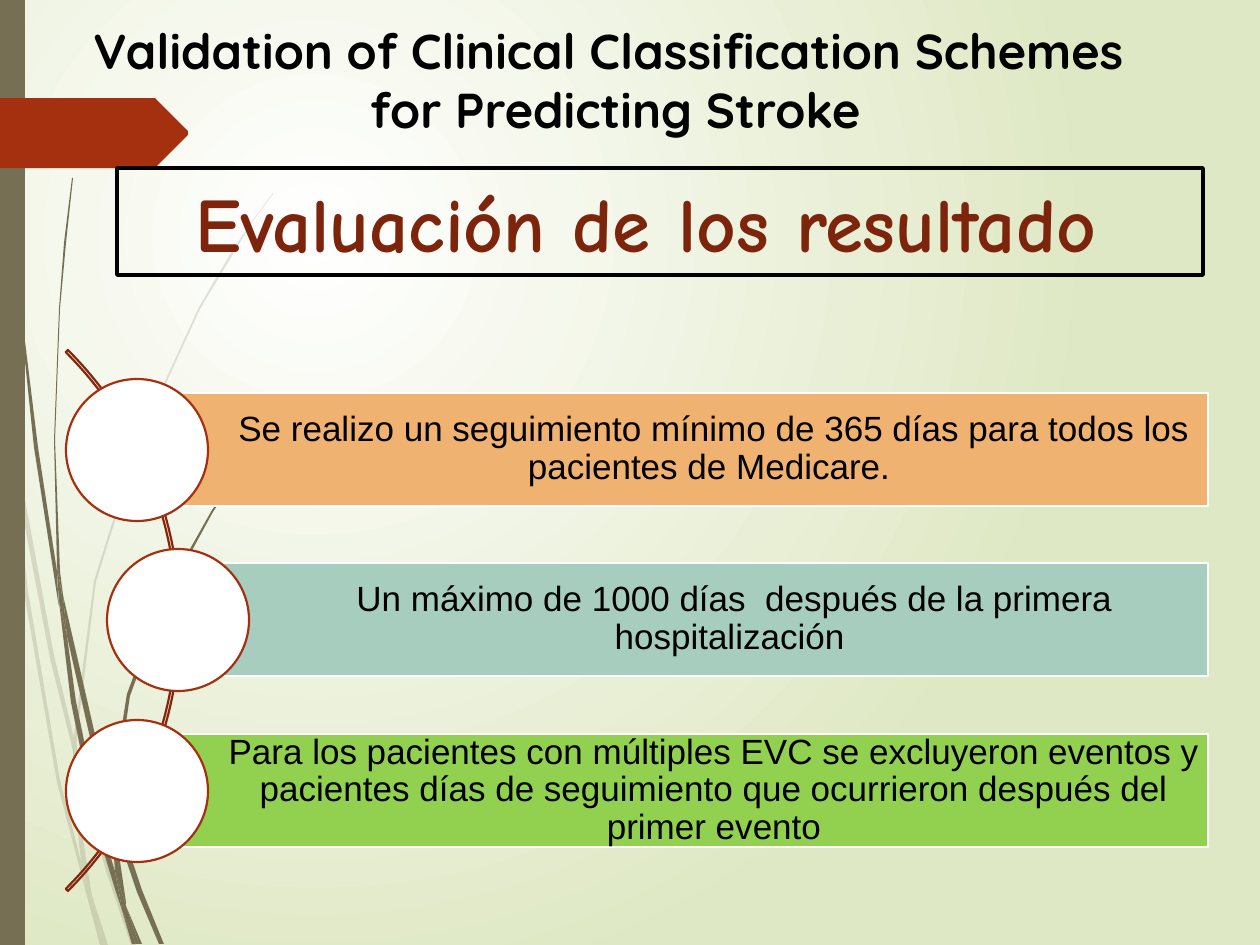
from lxml import etree
from pptx import Presentation
from pptx.dml.color import RGBColor
from pptx.enum.shapes import MSO_SHAPE
from pptx.enum.text import MSO_ANCHOR, MSO_AUTO_SIZE, PP_ALIGN
from pptx.oxml.ns import qn
from pptx.util import Inches, Pt

RECT, OVAL, ARC = MSO_SHAPE.RECTANGLE, MSO_SHAPE.OVAL, MSO_SHAPE.BLOCK_ARC
LEFT, MID = PP_ALIGN.LEFT, PP_ALIGN.CENTER
MIDDLE = MSO_ANCHOR.MIDDLE
FIXED, GROW = MSO_AUTO_SIZE.NONE, MSO_AUTO_SIZE.SHAPE_TO_FIT_TEXT
SCALE = Inches(1) / 126

TAUPE, RUST, WHITE, BLACK = "766F54", "A53010", "FFFFFF", "000000"

# Outlines of the grass blades, in px
PALE = [
    [(10, 441), (8, 406), (0, 355), (0, 377), (9, 433)],
    [(50, 658), (74, 755), (74, 738), (54, 655), (13, 435), (15, 474)],
    [(81, 765), (77, 751), (77, 769), (107, 874), (131, 945), (136, 945),
     (111, 872)],
    [(105, 945), (108, 945), (92, 896)],
    [(81, 861), (60, 780), (28, 591), (15, 474), (10, 441), (24, 592),
     (57, 782), (81, 873), (88, 900), (87, 891)],
    [(73, 755), (76, 814), (81, 861), (84, 872), (92, 896), (91, 890),
     (79, 814), (77, 769), (77, 766)],
    [(77, 736), (96, 582), (140, 440), (200, 309), (236, 249), (253, 221),
     (273, 194), (273, 193), (253, 220), (234, 248), (199, 307), (139, 438),
     (94, 581), (74, 736), (74, 738), (77, 751)],
    [(88, 900), (100, 945), (103, 945)],
    [(77, 766), (77, 769), (77, 751), (74, 738), (73, 755)],
    [(84, 872), (82, 861), (87, 891), (88, 900), (103, 945), (105, 945),
     (92, 896)],
]
DARK = [
    [(6, 139), (18, 294), (34, 447), (58, 601), (59, 606), (57, 576),
     (57, 571), (38, 447), (19, 292), (8, 137), (5, 60), (4, 0), (3, 0),
     (4, 60)],
    [(92, 746), (111, 813), (111, 795), (97, 743), (63, 595), (67, 636)],
    [(118, 818), (115, 808), (115, 827), (137, 892), (159, 944), (164, 944),
     (142, 890)],
    [(115, 871), (102, 828), (76, 701), (67, 636), (59, 601), (71, 702),
     (97, 830), (116, 892), (122, 910), (121, 903)],
    [(63, 595), (60, 571), (55, 440), (60, 309), (66, 243), (73, 178),
     (72, 178), (64, 243), (59, 309), (54, 440), (57, 566), (62, 595)],
    [(139, 944), (142, 944), (126, 906)],
    [(59, 601), (67, 636), (63, 595), (62, 595), (57, 566), (57, 571)],
    [(115, 798), (130, 696), (165, 600), (213, 512), (241, 471), (256, 452),
     (272, 433), (271, 433), (256, 451), (241, 470), (212, 510), (163, 597),
     (127, 694), (111, 795), (115, 808)],
    [(122, 910), (132, 944), (136, 944)],
    [(111, 813), (115, 871), (121, 890), (126, 906), (126, 902), (115, 827),
     (113, 820)],
    [(111, 813), (113, 820), (115, 827), (115, 808), (111, 795)],
    [(121, 890), (115, 871), (121, 903), (122, 910), (136, 944), (139, 944),
     (126, 906)],
]
TAB = [(0, 98), (155, 98), (188, 131), (188, 135), (155, 168), (0, 168)]

STEPS = [
    (137, "F0B270", "Se realizo un seguimiento mínimo de 365 días para todos "
     "los pacientes de Medicare. "),
    (178, "A6CDBD", "Un máximo de 1000 días  después de la primera "
     "hospitalización "),
    (137, "92D050", "Para los pacientes con múltiples EVC se excluyeron "
     "eventos y pacientes días de seguimiento que ocurrieron después del "
     "primer evento"),
]


def px(num):
    return round(num * SCALE)


def tint(code):
    return RGBColor.from_string(code)


def write(para, text, font="Arial", size=20, bold=False, color=BLACK,
          align=MID, space=None):
    run = para.add_run()
    run.text = text
    run.font.name, run.font.size, run.font.bold = font, Pt(size), bold
    run.font.color.rgb = tint(color)
    para.alignment = align
    if space:
        para.line_spacing = space


class Deck:
    def __init__(self):
        self.pres = Presentation()
        self.pres.slide_width, self.pres.slide_height = px(1260), px(945)
        self.slide = self.pres.slides.add_slide(self.pres.slide_layouts[5])
        self.shapes = self.slide.shapes

    def glow(self, inner, outer):
        """Fill the background with a round gradient."""
        fill = self.slide.background.fill
        fill.gradient()
        for stop, code in zip(fill.gradient_stops, (inner, outer)):
            stop.color.rgb = tint(code)
        grad = self.slide.element.find(".//" + qn("a:gradFill"))
        grad.remove(grad.find(qn("a:lin")))
        ring = etree.SubElement(grad, qn("a:path"), path="circle")
        etree.SubElement(ring, qn("a:fillToRect"), l="50000", t="50000",
                         r="100000", b="100000")

    def paint(self, shape, fill=None, line=None, width=1.25):
        if fill:
            shape.fill.solid()
            shape.fill.fore_color.rgb = tint(fill)
        else:
            shape.fill.background()
        if line:
            shape.line.color.rgb = tint(line)
            shape.line.width = Pt(width)
        else:
            shape.line.fill.background()

    def shape(self, kind, x, y, w, h, **look):
        item = self.shapes.add_shape(kind, px(x), px(y), px(w), px(h))
        item.shadow.inherit = False
        self.paint(item, **look)
        return item

    def blade(self, points, fill, alpha=None):
        """Draw a closed outline; alpha is its opacity in percent."""
        pen = self.shapes.build_freeform(*points[0], scale=SCALE)
        pen.add_line_segments(points[1:], close=True)
        item = pen.convert_to_shape()
        item.shadow.inherit = False
        self.paint(item, fill)
        if alpha:
            code = item.element.spPr.find(".//" + qn("a:srgbClr"))
            etree.SubElement(code, qn("a:alpha"), val=str(alpha * 1000))

    def bar(self, x, y, w, h, fill, text):
        frame = self.shape(RECT, x, y, w, h, fill=fill, line=WHITE).text_frame
        frame.word_wrap = True
        frame.vertical_anchor = MIDDLE
        frame.margin_left = px(91)
        frame.margin_top = frame.margin_right = frame.margin_bottom = px(8)
        write(frame.paragraphs[0], text, space=0.9)

    def head(self, x, y, w, h, first, second):
        frame = self.shapes.add_textbox(px(x), px(y), px(w), px(h)).text_frame
        frame.word_wrap = False
        frame.auto_size = GROW
        look = dict(font="Quicksand", size=28, bold=True)
        write(frame.paragraphs[0], first, align=LEFT, **look)
        write(frame.add_paragraph(), second, **look)

    def title(self, x, y, w, h, text):
        item = self.shapes.title
        item.left, item.top, item.width, item.height = map(px, (x, y, w, h))
        self.paint(item, line=BLACK, width=2.25)
        frame = item.text_frame
        frame.word_wrap = True
        frame.auto_size = FIXED
        frame.vertical_anchor = MIDDLE
        write(frame.paragraphs[0], text, font="Comic Neue", size=44,
              bold=True, color="7C240C")
        # Bring the title in front of the grass
        item.element.getparent().append(item.element)


def main():
    deck = Deck()
    deck.glow(WHITE, "DFE8C4")
    for points in PALE:
        deck.blade(points, TAUPE, alpha=20)
    for points in DARK:
        deck.blade(points, TAUPE)
    deck.shape(RECT, 0, 0, 25, 945, fill=TAUPE)
    deck.blade(TAB, RUST)

    arc = deck.shape(ARC, -585, 238, 765, 765, line="84260D")
    for i, value in enumerate((189, 27, 0.004)):
        arc.adjustments[i] = value
    for i, (left, fill, text) in enumerate(STEPS):
        top = 393 + 341 * i // 2
        deck.bar(left, top, 1208 - left, 113, fill, text)
        deck.shape(OVAL, left - 71, top - 14, 142, 142, fill=WHITE, line=RUST)

    deck.head(81, 14, 1087, 131, "Validation of Clinical Classification Schemes",
              " for Predicting Stroke")
    deck.title(117, 168, 1086, 107, "Evaluación de los resultado ")
    deck.pres.save("out.pptx")


if __name__ == "__main__":
    main()
